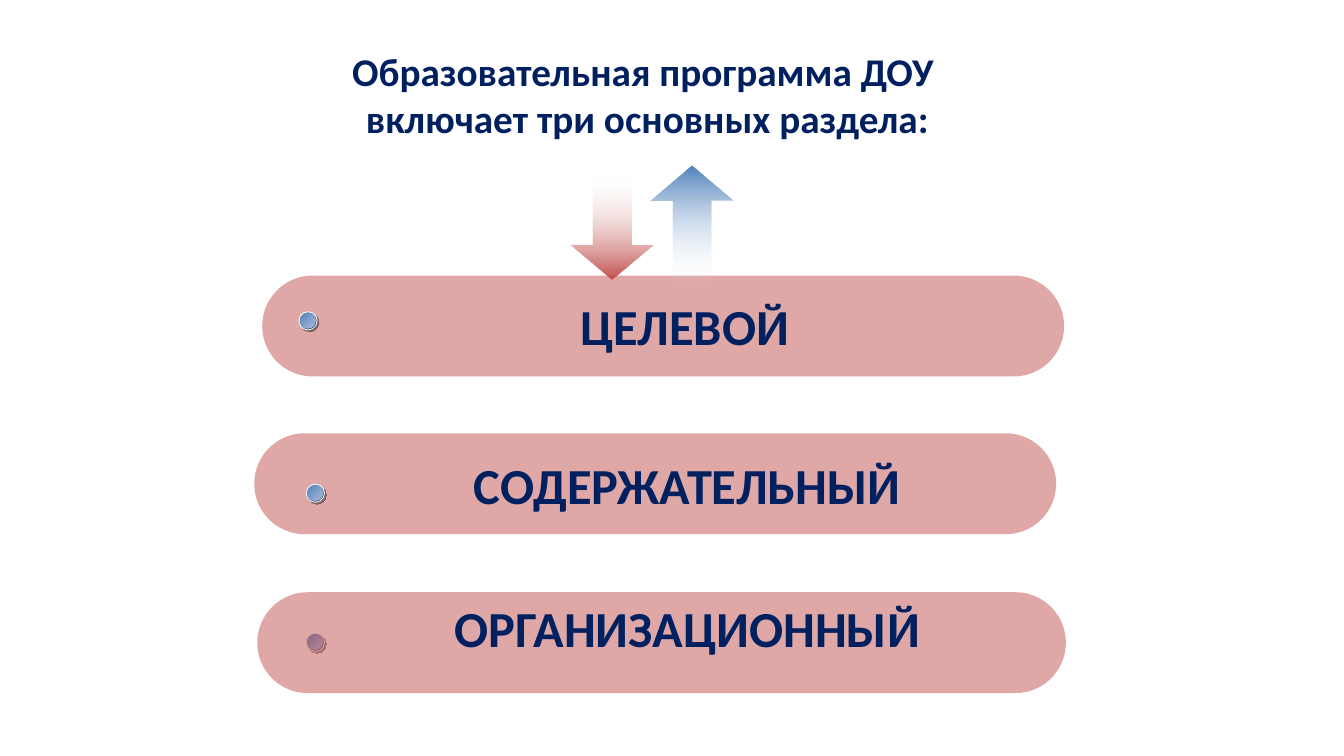
from lxml.etree import SubElement
from pptx import Presentation
from pptx.dml.color import RGBColor
from pptx.enum.shapes import MSO_SHAPE
from pptx.enum.text import MSO_ANCHOR, PP_ALIGN
from pptx.oxml.ns import qn
from pptx.util import Inches, Pt


def color(code):
    return RGBColor.from_string(code)


def add_alpha(node, percent):
    SubElement(node, qn("a:alpha")).set("val", str(percent * 1000))


class Deck:
    font = "Calibri"
    navy = "002060"
    red = "C0504D"
    blue = "4F81BD"

    def __init__(self, width, height):
        self.file = Presentation()
        self.file.slide_width = Inches(width)
        self.file.slide_height = Inches(height)
        self.slide = self.file.slides.add_slide(self.file.slide_layouts[6])

    def shape(self, kind, box, home=None):
        shapes = (home or self.slide).shapes
        item = shapes.add_shape(kind, *map(Inches, box))
        item.shadow.inherit = False
        item.line.fill.background()
        return item

    def blend(self, item, first, last, angle):
        item.fill.gradient()
        item.fill.gradient_angle = angle
        for stop, code in zip(item.fill.gradient_stops, (first, last)):
            stop.color.rgb = color(code)

    def text(self, words, box, size, spacing=1.0, inset=True):
        item = self.slide.shapes.add_textbox(*map(Inches, box))
        frame = item.text_frame
        frame.word_wrap = True
        frame.vertical_anchor = MSO_ANCHOR.TOP
        if not inset:
            frame.margin_left = frame.margin_right = 0
            frame.margin_top = frame.margin_bottom = 0
        frame.text = words
        line = frame.paragraphs[0]
        line.alignment = PP_ALIGN.CENTER
        line.line_spacing = spacing
        for run in line.runs:
            run.font.name = self.font
            run.font.size = Pt(size)
            run.font.bold = True
            run.font.color.rgb = color(self.navy)

    def arrow(self, box, turn, code):
        item = self.shape(MSO_SHAPE.RIGHT_ARROW, box)
        item.rotation = turn
        item.adjustments[0] = 0.465
        item.adjustments[1] = 0.421
        self.blend(item, "FFFFFF", code, 0)
        tail = next(item._element.spPr.iter(qn("a:srgbClr")))
        add_alpha(tail, 0)

    def bar(self, box):
        item = self.shape(MSO_SHAPE.ROUNDED_RECTANGLE, box)
        item.adjustments[0] = 0.5
        item.fill.solid()
        item.fill.fore_color.rgb = color(self.red)
        add_alpha(next(item._element.spPr.iter(qn("a:srgbClr"))), 50)

    def bullet(self, left, top):
        group = self.slide.shapes.add_group_shape()
        ring = self.shape(MSO_SHAPE.OVAL, (left, top, 0.3, 0.3), group)
        self.blend(ring, "DDDDE1", "223864", 315)
        ring.line.color.rgb = color("F8F8F8")
        ring.line.width = Pt(1)
        effect = ring._element.spPr.find(qn("a:effectLst"))
        shade = SubElement(effect, qn("a:outerShdw"))
        shade.set("dist", str(Pt(2.8)))
        shade.set("dir", str(45 * 60000))
        tint = SubElement(shade, qn("a:srgbClr"))
        tint.set("val", "1C1C1C")
        add_alpha(tint, 50)
        core = self.shape(
            MSO_SHAPE.OVAL, (left + 0.02, top + 0.02, 0.25, 0.25), group)
        self.blend(core, self.blue, "ADBCD8", 315)


def main():
    deck = Deck(21.99, 12.37)
    deck.text("Образовательная программа ДОУ \vвключает три основных раздела:",
              (4.16, 0.77, 12.87, 2.06), 46.2, inset=False)
    deck.arrow((9.13, 3.01, 1.77, 1.36), 90, deck.red)
    deck.bullet(5.01, 10.36)
    sections = [
        ("ЦЕЛЕВОЙ", (4.29, 4.51, 13.12, 1.65), (5.45, 4.89, 11.51, 1)),
        ("СОДЕРЖАТЕЛЬНЫЙ", (4.16, 7.09, 13.12, 1.65), (5.59, 7.5, 11.31, 1)),
        ("ОРГАНИЗАЦИОННЫЙ", (4.21, 9.69, 13.23, 1.65), (5.73, 9.83, 11.04, 1)),
    ]
    for name, bar, label in sections:
        deck.bar(bar)
        deck.text(name, label, 59.4, 0.9)
    deck.arrow((10.35, 3.01, 1.95, 1.36), 270, deck.blue)
    deck.bullet(5.01, 7.92)
    deck.bullet(4.89, 5.1)
    deck.file.save("out.pptx")


if __name__ == "__main__":
    main()
